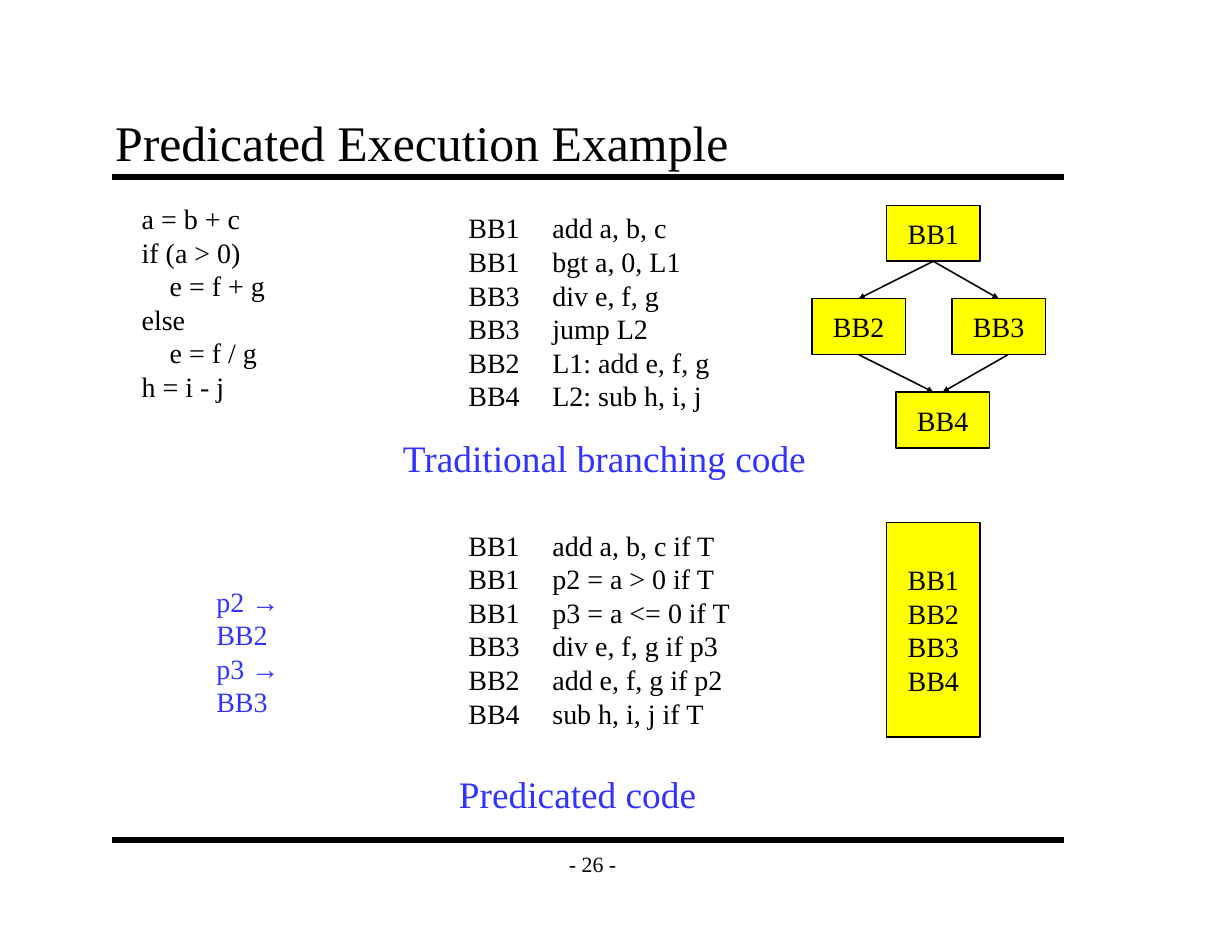
from lxml import etree
from pptx import Presentation
from pptx.dml.color import RGBColor
from pptx.enum.shapes import MSO_CONNECTOR, MSO_SHAPE
from pptx.enum.text import MSO_ANCHOR, PP_ALIGN
from pptx.oxml.ns import qn
from pptx.util import Pt

LEFT, CENTER = PP_ALIGN.LEFT, PP_ALIGN.CENTER
TOP, MIDDLE, BOTTOM = MSO_ANCHOR.TOP, MSO_ANCHOR.MIDDLE, MSO_ANCHOR.BOTTOM
RECT, STRAIGHT = MSO_SHAPE.RECTANGLE, MSO_CONNECTOR.STRAIGHT
COLORS = {"ink": "000000", "note": "3333FF", "block": "FFFF00"}
FONT = "Times New Roman"
INDENT = 18

prs = Presentation()
prs.slide_width, prs.slide_height = Pt(792), Pt(612)
s = prs.slides.add_slide(prs.slide_layouts[5])


def write(sp, text, size=18, color="ink", align=LEFT, anchor=TOP, wrap=False,
          margins=(7.2, 3.6)):
    """Fill a shape with one paragraph per line; a leading tab indents a line."""
    tf = sp.text_frame
    tf.word_wrap, tf.vertical_anchor = wrap, anchor
    tf.margin_left = tf.margin_right = Pt(margins[0])
    tf.margin_top = tf.margin_bottom = Pt(margins[1])
    for i, line in enumerate(text.split("\n")):
        p = tf.paragraphs[0] if i == 0 else tf.add_paragraph()
        p.alignment = align
        p.line_spacing = Pt(size * 1.2)
        if line.startswith("\t"):
            p._p.get_or_add_pPr().set("marL", str(Pt(INDENT)))
        r = p.add_run()
        r.text = line.strip()
        r.font.size, r.font.name = Pt(size), FONT
        r.font.color.rgb = RGBColor.from_string(COLORS[color])


def connect(x1, y1, x2, y2, width=1, arrow=True):
    c = s.shapes.add_connector(STRAIGHT, Pt(x1), Pt(y1), Pt(x2), Pt(y2))
    c.line.width = Pt(width)
    c.line.color.rgb = RGBColor.from_string(COLORS["ink"])
    if arrow:
        etree.SubElement(c.line._get_or_add_ln(), qn("a:tailEnd"),
                         type="triangle", w="sm", len="sm")
    etree.SubElement(c._element.spPr, qn("a:effectLst"))
    return c


# Title, rules and page number
title = s.shapes.title
title.left, title.top, title.width, title.height = Pt(66), Pt(66), Pt(612), Pt(48)
write(title, "Predicated Execution Example", size=32, anchor=BOTTOM, wrap=True,
      margins=(8, 4))
for y in (114, 540):
    connect(72, y, 684, y, width=4, arrow=False)
page = s.shapes.add_textbox(Pt(354), Pt(540), Pt(54), Pt(30))
write(page, "- 26 -", size=14, align=CENTER, anchor=MIDDLE)

# Control flow graph and the merged block
blocks = {}
for name, x, y, h, text in [
    ("BB1", 570, 132, 36, "BB1"),
    ("BB2", 522, 192, 36, "BB2"),
    ("BB3", 612, 192, 36, "BB3"),
    ("BB4", 576, 252, 36, "BB4"),
    ("merged", 570, 336, 138, "BB1\nBB2\nBB3\nBB4"),
]:
    sp = s.shapes.add_shape(RECT, Pt(x), Pt(y), Pt(60), Pt(h))
    sp.shadow.inherit = False
    sp.fill.solid()
    sp.fill.fore_color.rgb = RGBColor.from_string(COLORS["block"])
    sp.line.color.rgb = RGBColor.from_string(COLORS["ink"])
    sp.line.width = Pt(1)
    write(sp, text, align=CENTER, anchor=MIDDLE)
    blocks[name] = sp

# Two edges stop beside a side's middle and are joined at one end only
for start, end, line in [
    ("BB1", "BB2", (600, 168, 552, 192)),
    ("BB1", "BB3", (600, 168, 642, 192)),
    ("BB2", None, (552, 228, 600, 252)),
    (None, "BB4", (648, 228, 606, 252)),
]:
    c = connect(*line)
    if start:
        c.begin_connect(blocks[start], 2)
    if end:
        c.end_connect(blocks[end], 0)

# Source code, both instruction listings and the predicate note
for x, y, w, h, color, wrap, text in [
    (84, 126, 100, 137, "ink", True,
     "a = b + c\nif (a > 0)\n\te = f + g\nelse\n\te = f / g\nh = i - j"),
    (294, 132, 54, 137, "ink", True, "BB1\nBB1\nBB3\nBB3\nBB2\nBB4"),
    (348, 132, 140, 137, "ink", True,
     "add a, b, c\nbgt a, 0, L1\ndiv e, f, g\njump L2\n"
     "L1: add e, f, g\nL2: sub h, i, j"),
    (294, 336, 54, 137, "ink", True, "BB1\nBB1\nBB1\nBB3\nBB2\nBB4"),
    (348, 336, 140, 137, "ink", True,
     "add a, b, c if T\np2 = a > 0 if T\np3 = a <= 0 if T\n"
     "div e, f, g if p3\nadd e, f, g if p2\nsub h, i, j if T"),
    (132, 372, 80, 94, "note", True, "p2 → BB2\np3 → BB3"),
]:
    sp = s.shapes.add_textbox(Pt(x), Pt(y), Pt(w), Pt(h))
    write(sp, text, color=color, wrap=wrap)

# Captions
for x, y, text in [(252, 276, "Traditional branching code"),
                   (288, 492, "Predicated code")]:
    sp = s.shapes.add_textbox(Pt(x), Pt(y), Pt(313), Pt(36))
    write(sp, text, size=24, color="note", wrap=True)

prs.save("out.pptx")
